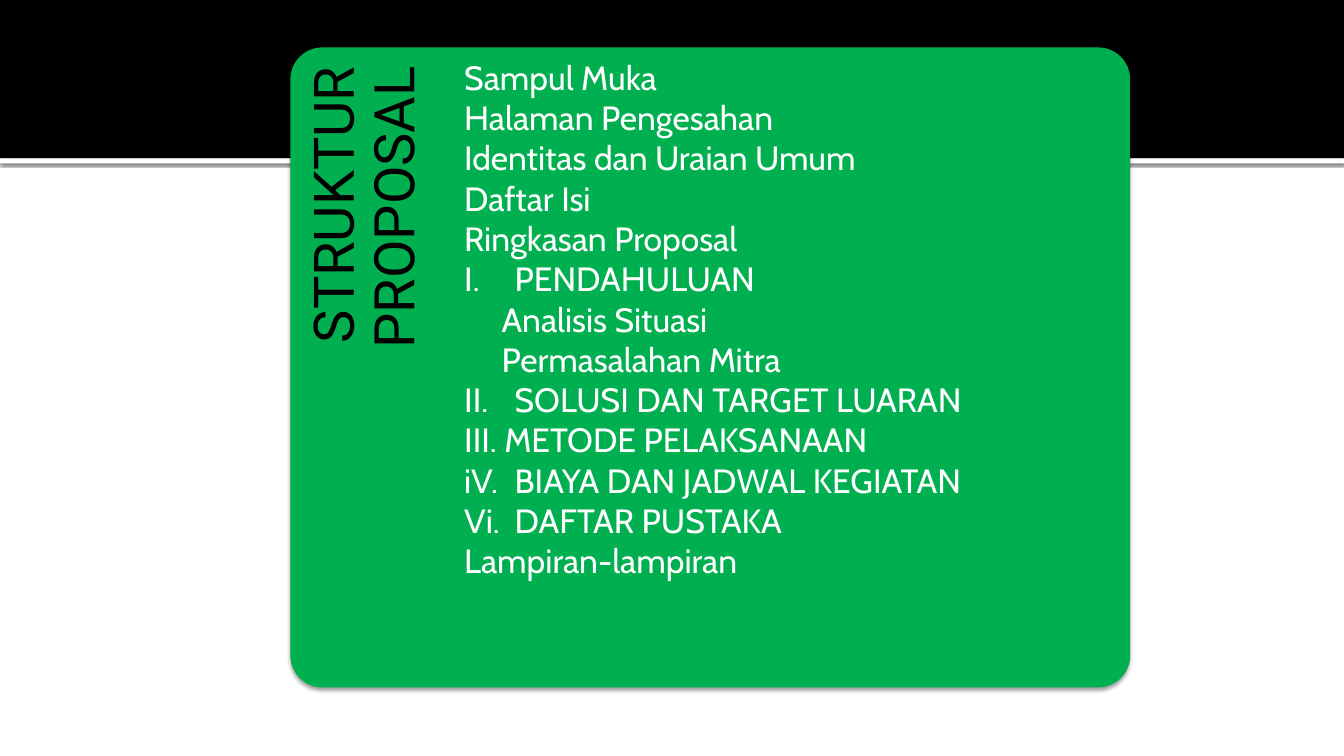
from lxml.etree import SubElement
from pptx import Presentation
from pptx.dml.color import RGBColor
from pptx.enum.shapes import MSO_SHAPE as Shape
from pptx.enum.text import PP_ALIGN as Align
from pptx.oxml.ns import qn
from pptx.util import Inches, Pt

COLOURS = {"black": "000000", "white": "FFFFFF", "green": "00B050"}
WIDTH, HEIGHT = 13.33, 7.5
BAND_HEIGHT, STRIPE_HEIGHT = 1.57, 0.05
TITLE_SHARE, LIST_START, LIST_END = 0.2, 0.207, 0.952
CHAPTER_INDENT = 0.37
OUTLINE = [
    {"text": "Sampul Muka"},
    {"text": "Halaman Pengesahan"},
    {"text": "Identitas dan Uraian Umum"},
    {"text": "Daftar Isi"},
    {"text": "Ringkasan Proposal"},
    {"text": "I.\tPENDAHULUAN", "tab": 0.3},
    {"text": "Analisis Situasi", "indent": CHAPTER_INDENT},
    {"text": "Permasalahan Mitra", "indent": CHAPTER_INDENT},
    {"text": "II.\tSOLUSI DAN TARGET LUARAN", "tab": 0.38},
    {"text": "III. METODE PELAKSANAAN"},
    {"text": "iV.\tBIAYA DAN JADWAL KEGIATAN", "tab": 0.48},
    {"text": "Vi.\tDAFTAR PUSTAKA", "tab": 0.5},
    {"text": "Lampiran-lampiran"},
]


def add_panel(page, kind, box, colour):
    """Add a borderless filled shape without a shadow."""
    panel = page.shapes.add_shape(kind, *map(Inches, box))
    panel.fill.solid()
    panel.fill.fore_color.rgb = RGBColor.from_string(COLOURS[colour])
    panel.line.fill.background()
    panel.shadow.inherit = False
    return panel


def cast_shadow(panel, opacity, blur, distance):
    """Give a shape a black shadow that falls straight down."""
    effects = panel._element.spPr.find(qn("a:effectLst"))
    shadow = SubElement(effects, qn("a:outerShdw"), blurRad=str(Pt(blur)),
                        dist=str(Pt(distance)), dir="5400000", rotWithShape="0")
    colour = SubElement(shadow, qn("a:srgbClr"), val=COLOURS["black"])
    SubElement(colour, qn("a:alpha"), val=str(opacity * 1000))


def add_frame(page, box, insets):
    """Add a wrapping text box with left, top, right and bottom insets."""
    holder = page.shapes.add_textbox(*map(Inches, box))
    frame = holder.text_frame
    frame.word_wrap = True
    (frame.margin_left, frame.margin_top,
     frame.margin_right, frame.margin_bottom) = map(Inches, insets)
    return holder


def write(para, text, *, font, size, colour, align=Align.LEFT, spacing=1.0,
          indent=0, tab=None):
    """Write one formatted paragraph."""
    para.alignment = align
    para.line_spacing = spacing
    properties = para._p.get_or_add_pPr()
    properties.set("marL", "0")
    properties.set("indent", str(Inches(indent)))
    if tab:
        stops = SubElement(properties, qn("a:tabLst"))
        SubElement(stops, qn("a:tab"), pos=str(Inches(tab)), algn="l")
    span = para.add_run()
    span.text = text
    span.font.name = font
    span.font.size = Pt(size)
    span.font.color.rgb = RGBColor.from_string(COLOURS[colour])


def draw_header(page, box):
    """Draw the black band and the shadowed stripe beneath it."""
    left, top, width, height = box
    stripe = add_panel(page, Shape.RECTANGLE,
                       (left, top + height, width, STRIPE_HEIGHT), "white")
    cast_shadow(stripe, 60, 2.5, 0.8)
    add_panel(page, Shape.RECTANGLE, box, "black")


def draw_title(page, box):
    """Write the title upwards along the box."""
    left, top, width, length = box
    flat = (left + (width - length) / 2, top + (length - width) / 2, length, width)
    title = add_frame(page, flat, (0, 0.15, 0.19, 0))
    title.rotation = 270
    write(title.text_frame.paragraphs[0], "STRUKTUR PROPOSAL", font="Roboto",
          size=40, colour="black", align=Align.RIGHT, spacing=0.9)


def draw_outline(page, box):
    """List the parts of the proposal."""
    frame = add_frame(page, box, (0, 0.09, 0, 0)).text_frame
    for number, entry in enumerate(OUTLINE):
        para = frame.add_paragraph() if number else frame.paragraphs[0]
        write(para, font="Cabin", size=24, colour="white", **entry)


def draw_card(page, box):
    """Draw the green card with its title and list."""
    left, top, width, height = box
    card = add_panel(page, Shape.ROUNDED_RECTANGLE, box, "green")
    card.adjustments[0] = 0.05
    cast_shadow(card, 38, 3.1, 2)
    draw_title(page, (left, top, width * TITLE_SHARE, height * 0.82))
    draw_outline(page, (left + width * LIST_START, top,
                        width * (LIST_END - LIST_START), height))


def main():
    """Build and save the slide."""
    deck = Presentation()
    deck.slide_width, deck.slide_height = Inches(WIDTH), Inches(HEIGHT)
    page = deck.slides.add_slide(deck.slide_layouts[6])
    draw_header(page, (0, 0, WIDTH, BAND_HEIGHT))
    draw_card(page, (2.88, 0.47, 8.33, 6.35))
    deck.save("out.pptx")


if __name__ == "__main__":
    main()
